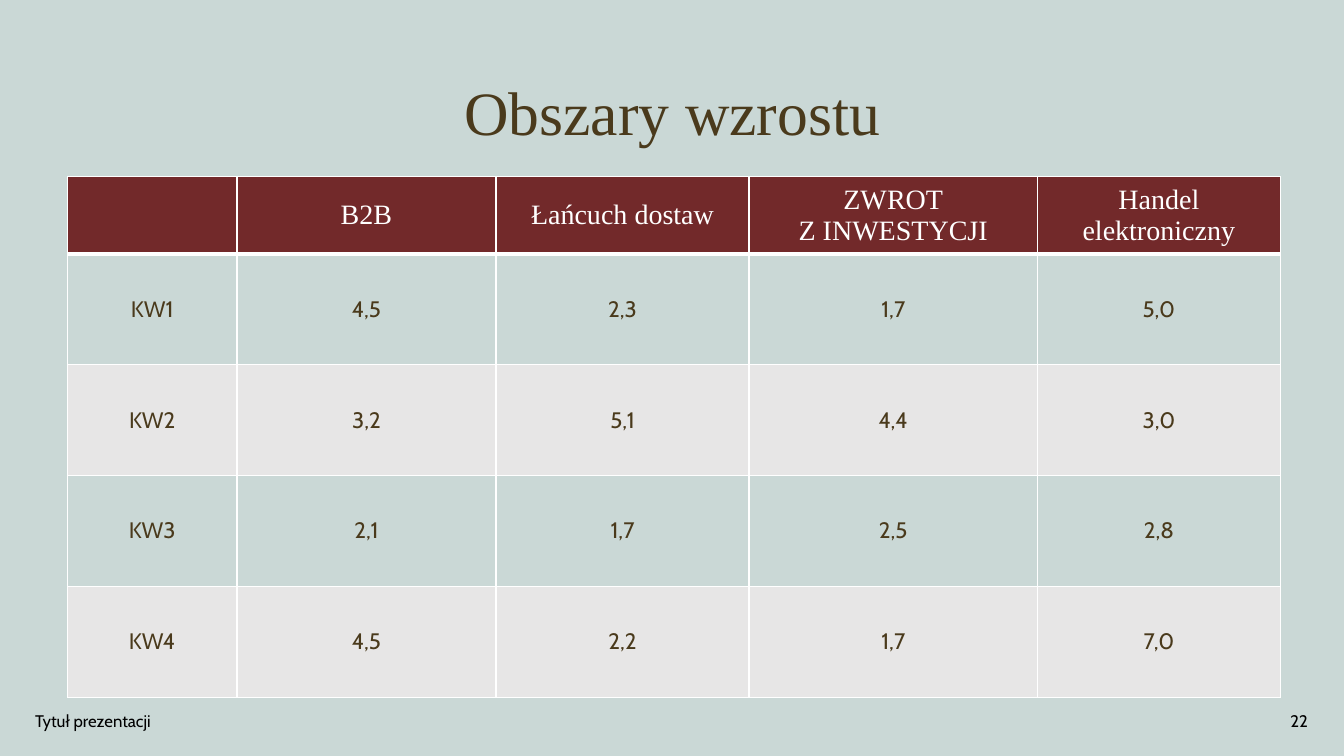
from lxml import etree
from pptx import Presentation
from pptx.dml.color import RGBColor
from pptx.enum.text import MSO_ANCHOR, PP_ALIGN
from pptx.oxml.ns import qn
from pptx.util import Inches, Pt

LEFT, CENTER, RIGHT = PP_ALIGN.LEFT, PP_ALIGN.CENTER, PP_ALIGN.RIGHT
MIDDLE = MSO_ANCHOR.MIDDLE

SAGE = RGBColor(0xCA, 0xD8, 0xD6)
GREY = RGBColor(0xE7, 0xE6, 0xE6)
MAROON = RGBColor(0x72, 0x29, 0x2A)
BROWN = RGBColor(0x4A, 0x3A, 0x1C)
WHITE = RGBColor(0xFF, 0xFF, 0xFF)
BLACK = RGBColor(0x00, 0x00, 0x00)

SERIF, SANS = "Times New Roman", "Cabin"
TITLE_FONT = {"name": SERIF, "size": Pt(44), "color": BROWN}
HEADER_FONT = {"name": SERIF, "size": Pt(20), "color": WHITE}
BODY_FONT = {"name": SANS, "size": Pt(16), "color": BROWN}
FOOTER_FONT = {"name": SANS, "size": Pt(12), "color": BLACK}

GROWTH = [
    ["", "B2B", "Łańcuch dostaw", "ZWROT\vZ INWESTYCJI", "Handel elektroniczny"],
    ["KW1", "4,5", "2,3", "1,7", "5,0"],
    ["KW2", "3,2", "5,1", "4,4", "3,0"],
    ["KW3", "2,1", "1,7", "2,5", "2,8"],
    ["KW4", "4,5", "2,2", "1,7", "7,0"],
]
COLUMN_WIDTHS = [1.68, 2.57, 2.51, 2.86, 2.41]
HEADER_HEIGHT, QUARTER_HEIGHT = 0.71, 1.1
THIN, THICK = 1, 3


def write(frame, text, font, align):
    paragraph = frame.paragraphs[0]
    paragraph.text = text
    paragraph.alignment = align
    for run in paragraph.runs:
        for key, value in font.items():
            if key == "color":
                run.font.color.rgb = value
            else:
                setattr(run.font, key, value)
    return paragraph


def add_label(slide, box, text, font, align):
    label = slide.shapes.add_textbox(*map(Inches, box))
    frame = label.text_frame
    frame.word_wrap = True
    frame.vertical_anchor = MIDDLE
    return write(frame, text, font, align)


def add_borders(cell, widths):
    """Draw white cell edges; widths maps L, R, T, B to points."""
    properties = cell._tc.get_or_add_tcPr()
    for side, width in widths.items():
        line = etree.SubElement(properties, qn(f"a:ln{side}"), w=str(Pt(width)))
        fill = etree.SubElement(line, qn("a:solidFill"))
        etree.SubElement(fill, qn("a:srgbClr"), val=str(WHITE))


def add_title(slide, box):
    title = add_label(slide, box, "Obszary wzrostu", TITLE_FONT, CENTER)
    title.line_spacing = 0.9


def add_growth_table(slide, box):
    table = slide.shapes.add_table(
        len(GROWTH), len(COLUMN_WIDTHS), *map(Inches, box)).table
    for column, width in zip(table.columns, COLUMN_WIDTHS):
        column.width = Inches(width)
    for r, values in enumerate(GROWTH):
        is_header = r == 0
        table.rows[r].height = Inches(HEADER_HEIGHT if is_header else QUARTER_HEIGHT)
        row_fill = MAROON if is_header else (SAGE if r % 2 else GREY)
        edges = {"L": THIN, "R": THIN,
                 "T": THICK if r == 1 else THIN,
                 "B": THICK if is_header else THIN}
        for c, value in enumerate(values):
            cell = table.cell(r, c)
            add_borders(cell, edges)
            cell.fill.solid()
            cell.fill.fore_color.rgb = row_fill
            cell.vertical_anchor = MIDDLE
            write(cell.text_frame, value, HEADER_FONT if is_header else BODY_FONT, CENTER)


def add_footer(slide, box):
    left, top, width, height = box
    name_width, number_width = 4.5, 3
    add_label(slide, (left, top, name_width, height),
              "Tytuł prezentacji", FOOTER_FONT, LEFT)
    add_label(slide, (left + width - number_width, top, number_width, height),
              "22", FOOTER_FONT, RIGHT)


def main():
    deck = Presentation()
    deck.slide_width, deck.slide_height = Inches(13.33), Inches(7.5)
    slide = deck.slides.add_slide(deck.slide_layouts[6])
    slide.background.fill.solid()
    slide.background.fill.fore_color.rgb = SAGE
    add_title(slide, (0.92, 0.42, 11.5, 1.45))
    add_growth_table(slide, (0.67, 1.75, 12.03, 5.11))
    add_footer(slide, (0.25, 6.95, 12.82, 0.4))
    deck.save("out.pptx")


if __name__ == "__main__":
    main()
